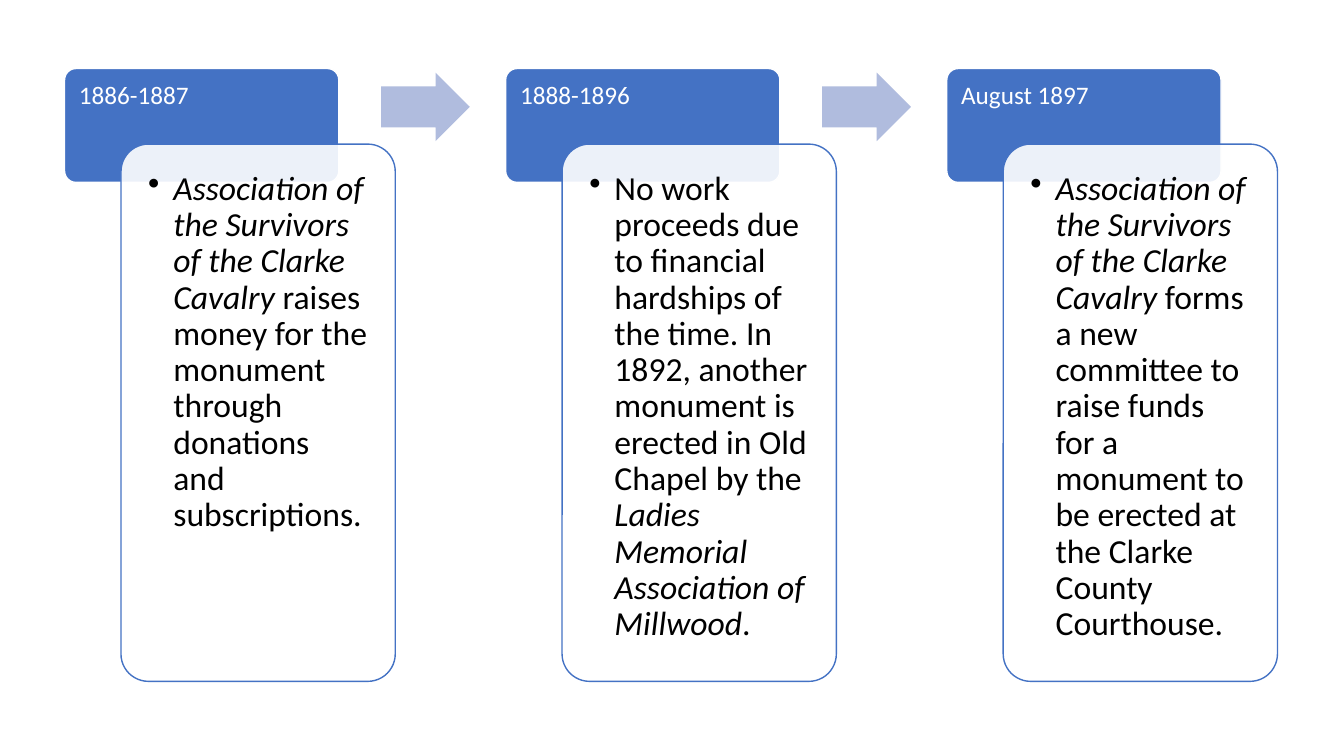
from lxml import etree
from pptx import Presentation
from pptx.dml.color import RGBColor
from pptx.enum.shapes import MSO_SHAPE
from pptx.enum.text import MSO_ANCHOR, PP_ALIGN
from pptx.oxml.ns import qn
from pptx.util import Inches, Pt

ROUND, ARROW = MSO_SHAPE.ROUNDED_RECTANGLE, MSO_SHAPE.RIGHT_ARROW
TOP, LEFT = MSO_ANCHOR.TOP, PP_ALIGN.LEFT

GROUP = "Association of the Survivors of the Clarke Cavalry "
STAGES = [
    ("1886-1887", [
        (GROUP, True),
        ("raises money for the monument through donations and subscriptions.", False)]),
    ("1888-1896", [
        ("No work proceeds due to financial hardships of the time. In 1892, "
         "another monument is erected in Old Chapel by the ", False),
        ("Ladies Memorial Association of Millwood", True),
        (".", False)]),
    ("August 1897", [
        (GROUP, True),
        ("forms a new committee to raise funds for a monument to be erected "
         "at the Clarke County Courthouse.", False)]),
]
COLORS = {"blue": "4472C4", "pale": "B0BCDE", "white": "FFFFFF", "black": "000000"}
FONT = "Calibri"
START, SPAN = 0.64, 8.75
WIDTH = 2.72


def color(name):
    """Return the named colour."""
    return RGBColor.from_string(COLORS[name])


def add_box(slide, kind, place, fill, line=None, adjust=(0.1,)):
    """Add a filled shape with an optional outline."""
    box = slide.shapes.add_shape(kind, *map(Inches, place))
    box.shadow.inherit = False
    for i, value in enumerate(adjust):
        box.adjustments[i] = value
    box.fill.solid()
    box.fill.fore_color.rgb = color(fill)
    if line:
        box.line.color.rgb = color(line)
        box.line.width = Pt(1)
    else:
        box.line.fill.background()
    return box


def write(box, parts, size, ink, inset, bullet=False):
    """Fill a shape with one paragraph of plain and italic runs."""
    frame = box.text_frame
    frame.word_wrap = True
    frame.vertical_anchor = TOP
    frame.margin_left = frame.margin_right = Inches(inset)
    frame.margin_top = frame.margin_bottom = Inches(inset)
    para = frame.paragraphs[0]
    para.alignment = LEFT
    para.line_spacing = 0.9
    if bullet:
        props = para._p.get_or_add_pPr()
        props.set("marL", str(Inches(0.25)))
        props.set("indent", str(-Inches(0.25)))
        etree.SubElement(props, qn("a:buChar")).set("char", "•")
    for words, italic in parts:
        run = para.add_run()
        run.text = words
        run.font.name = FONT
        run.font.size = Pt(size)
        run.font.italic = italic
        run.font.color.rgb = color(ink)


def add_stage(slide, left, date, story):
    """Add a date header with its story card."""
    head = add_box(slide, ROUND, (left, 0.68, WIDTH, 1.13), "blue", "white")
    write(head, [(date, False)], 18, "white", 0.11)
    card = add_box(slide, ROUND, (left + 0.56, 1.43, WIDTH, 5.33), "white", "blue")
    tint = card.fill._xPr.find(qn("a:solidFill"))[0]
    etree.SubElement(tint, qn("a:alpha")).set("val", "90000")
    write(card, story, 24, "black", 0.19, bullet=True)


def main():
    """Build the timeline slide."""
    deck = Presentation()
    deck.slide_width, deck.slide_height = Inches(13.33), Inches(7.5)
    slide = deck.slides.add_slide(deck.slide_layouts[6])
    last = len(STAGES) - 1
    for i, (date, story) in enumerate(STAGES):
        left = START + i * SPAN / last
        add_stage(slide, left, date, story)
        if i < last:
            add_box(slide, ARROW, (left + 3.14, 0.72, 0.88, 0.68), "pale",
                    adjust=(0.6, 0.5))
    deck.save("out.pptx")


if __name__ == "__main__":
    main()
